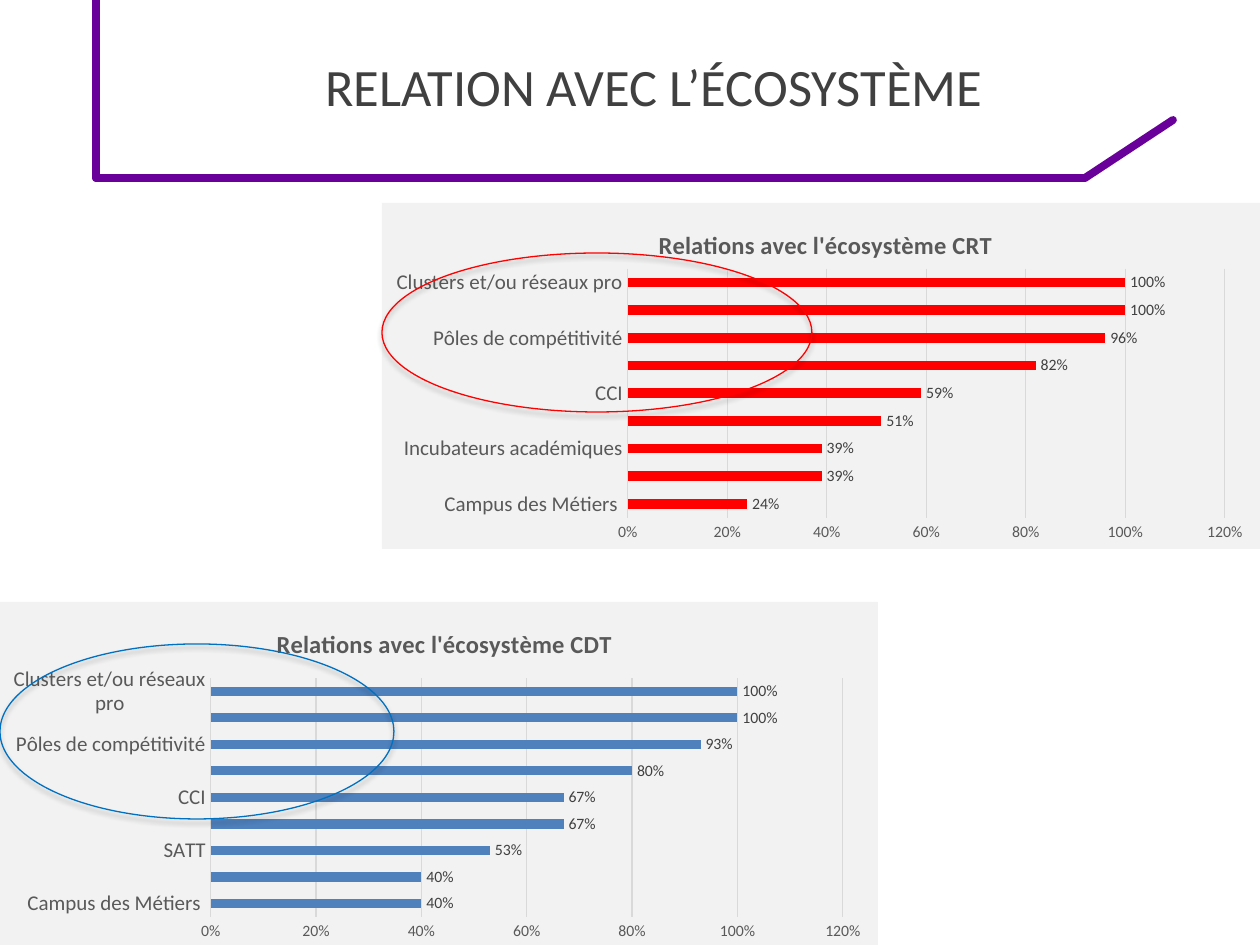
from lxml import etree
from pptx import Presentation
from pptx.chart.data import CategoryChartData
from pptx.dml.color import RGBColor
from pptx.enum.chart import XL_CHART_TYPE, XL_LABEL_POSITION, XL_TICK_MARK
from pptx.enum.shapes import MSO_CONNECTOR, MSO_SHAPE
from pptx.enum.text import MSO_ANCHOR, PP_ALIGN
from pptx.oxml import parse_xml
from pptx.oxml.ns import nsdecls, qn
from pptx.util import Pt

PX = 914400 // 126
FONT = "Calibri"
BARS = XL_CHART_TYPE.BAR_CLUSTERED
NO_TICK = XL_TICK_MARK.NONE
OUTSIDE = XL_LABEL_POSITION.OUTSIDE_END

PURPLE, RED, BLUE, RING_BLUE = "680099", "FF0000", "4F81BD", "0070C0"
DARK, GREY, GRID, PANEL = "404040", "595959", "D9D9D9", "F2F2F2"

FRAME = [(96, 0), (96, 178), (1085, 178), (1173, 120)]
CHART_SIZE = (878, 346)
CRT_RELATIONS = [
    ("Campus des Métiers ", 0.24), ("SATT", 0.39),
    (" Incubateurs académiques", 0.39), ("Instituts Carnot", 0.51),
    ("CCI", 0.59), ("ARI", 0.82), ("Pôles de compétitivité", 0.96),
    ("Autres structures labellisées  MESRI", 1),
    ("Clusters et/ou réseaux pro", 1),
]
CDT_RELATIONS = [
    ("Campus des Métiers ", 0.4), ("Instituts Carnot", 0.4), ("SATT", 0.53),
    ("Incubateurs académiques", 0.67), ("CCI", 0.67), ("ARI", 0.8),
    ("Pôles de compétitivité", 0.93),
    ("Autres structures labellisées  MESRI", 1),
    ("Clusters et/ou réseaux pro", 1),
]


def px(*lengths):
    return [length * PX for length in lengths]


def rgb(code):
    return RGBColor.from_string(code)


def style_font(font, size, color, bold=False):
    font.name, font.size, font.bold = FONT, Pt(size), bold
    font.color.rgb = rgb(color)


def style_line(line, color, width):
    line.color.rgb = rgb(color)
    line.width = Pt(width)


def add_frame(slide):
    for start, end in zip(FRAME, FRAME[1:]):
        edge = slide.shapes.add_connector(MSO_CONNECTOR.STRAIGHT, *px(*start, *end))
        style_line(edge.line, PURPLE, 4.5)
        edge.line._get_or_add_ln().set("cap", "rnd")
        etree.SubElement(edge._element.spPr, qn("a:effectLst"))


def set_title(slide, text):
    title = slide.shapes.title
    title.left, title.top, title.width, title.height = px(111, 20, 1086, 131)
    frame = title.text_frame
    frame.word_wrap = True
    frame.vertical_anchor = MSO_ANCHOR.MIDDLE
    paragraph = frame.paragraphs[0]
    paragraph.alignment = PP_ALIGN.CENTER
    run = paragraph.add_run()
    run.text = text
    style_font(run.font, 30, DARK)


def set_layout(owner, **fractions):
    """Place a chart part by hand, in fractions of the chart's size."""
    for old in owner.findall(qn("c:layout")):
        owner.remove(old)
    target = '<c:layoutTarget val="inner"/>' if "w" in fractions else ""
    modes = "".join(f'<c:{key}Mode val="edge"/>' for key in "xy")
    values = "".join(f'<c:{key} val="{value}"/>' for key, value in fractions.items())
    layout = parse_xml(f'<c:layout {nsdecls("c")}><c:manualLayout>{target}{modes}'
                       f'{values}</c:manualLayout></c:layout>')
    text = owner.find(qn("c:tx"))
    if text is None:
        owner.insert(0, layout)
    else:
        text.addnext(layout)


def fill_panel(chart):
    panel = parse_xml(f'<c:spPr {nsdecls("c", "a")}><a:solidFill><a:srgbClr val="{PANEL}"/>'
                      '</a:solidFill><a:ln><a:noFill/></a:ln></c:spPr>')
    chart._chartSpace.find(qn("c:chart")).addnext(panel)


def style_axes(chart):
    categories, values = chart.category_axis, chart.value_axis
    for axis, size in ((categories, 12), (values, 9)):
        axis.major_tick_mark = axis.minor_tick_mark = NO_TICK
        style_font(axis.tick_labels.font, size, GREY)
    categories.has_major_gridlines = False
    style_line(categories.format.line, GRID, 0.75)
    values.minimum_scale, values.maximum_scale, values.major_unit = 0, 1.2, 0.2
    values.tick_labels.number_format = "0%"
    values.tick_labels.number_format_is_linked = False
    values.format.line.fill.background()
    style_line(values.major_gridlines.format.line, GRID, 0.75)


def style_bars(plot, color):
    plot.gap_width = 182
    plot.vary_by_categories = False
    fill = plot.series[0].format.fill
    fill.solid()
    fill.fore_color.rgb = rgb(color)
    labels = plot.series[0].data_labels
    labels.show_value = True
    labels.position = OUTSIDE
    labels.number_format, labels.number_format_is_linked = "0%", False
    style_font(labels.font, 9, DARK)


def add_relations_chart(slide, corner, heading, relations, color, plot_area):
    data = CategoryChartData(number_format="0%")
    data.categories = [partner for partner, _ in relations]
    data.add_series("Series 1", [share for _, share in relations])
    chart = slide.shapes.add_chart(BARS, *px(*corner, *CHART_SIZE), data).chart
    chart.has_legend = False
    style_font(chart.font, 10, "000000")
    chart.has_title = True
    run = chart.chart_title.text_frame.paragraphs[0].add_run()
    run.text = heading
    style_font(run.font, 14, GREY, bold=True)
    chart.chart_title.include_in_layout = False
    set_layout(chart.chart_title._element, x=0.31, y=0.06)
    set_layout(chart._chartSpace.chart.plotArea, **plot_area)
    fill_panel(chart)
    style_axes(chart)
    style_bars(chart.plots[0], color)


def add_ring(slide, box, color):
    """Outline the leading partners with a softly shadowed ellipse."""
    ring = slide.shapes.add_shape(MSO_SHAPE.OVAL, *px(*box))
    ring.fill.background()
    style_line(ring.line, color, 0.75)
    ring.shadow.inherit = False
    effects = ring._element.spPr.find(qn("a:effectLst"))
    effects.append(parse_xml(
        f'<a:outerShdw {nsdecls("a")} blurRad="{Pt(3.1)}" dist="{Pt(1.8)}" dir="5400000" '
        'rotWithShape="0"><a:srgbClr val="000000"><a:alpha val="35000"/></a:srgbClr>'
        '</a:outerShdw>'))


def main():
    deck = Presentation()
    deck.slide_width, deck.slide_height = px(1260, 945)
    slide = deck.slides.add_slide(deck.slide_layouts[5])
    add_frame(slide)
    set_title(slide, "RELATION AVEC L’ÉCOSYSTÈME")
    add_relations_chart(slide, (382, 203), "Relations avec l'écosystème CRT",
                        CRT_RELATIONS, RED, dict(x=0.28, y=0.19, w=0.68, h=0.72))
    add_relations_chart(slide, (0, 602), "Relations avec l'écosystème CDT",
                        CDT_RELATIONS, BLUE, dict(x=0.24, y=0.22, w=0.72, h=0.69))
    add_ring(slide, (382, 253, 430, 159), RED)
    add_ring(slide, (0, 644, 394, 175), RING_BLUE)
    deck.save("out.pptx")


if __name__ == "__main__":
    main()
